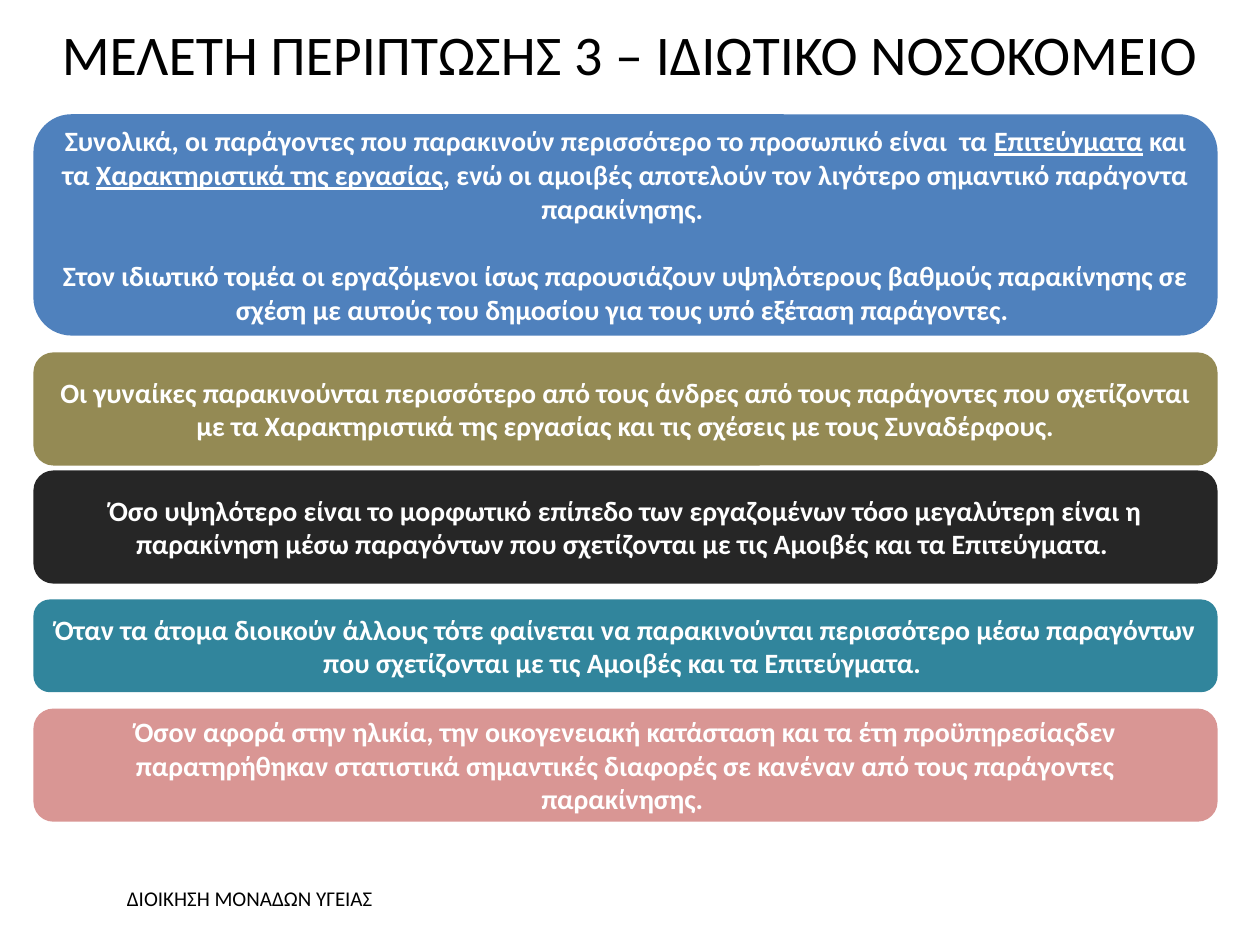
from pptx import Presentation
from pptx.dml.color import RGBColor
from pptx.enum import shapes, text
from pptx.util import Cm, Pt

WHITE = RGBColor(0xFF, 0xFF, 0xFF)
BLACK = RGBColor(0x00, 0x00, 0x00)
BLUE = RGBColor(0x4F, 0x81, 0xBD)
OLIVE = RGBColor(0x94, 0x8A, 0x54)
DARK = RGBColor(0x26, 0x26, 0x26)
TEAL = RGBColor(0x31, 0x85, 0x9C)
PINK = RGBColor(0xD9, 0x96, 0x94)
FONT = "Calibri"

TITLE = "ΜΕΛΕΤΗ ΠΕΡΙΠΤΩΣΗΣ 3 – ΙΔΙΩΤΙΚΟ ΝΟΣΟΚΟΜΕΙΟ"
FOOTER = "ΔΙΟΙΚΗΣΗ ΜΟΝΑΔΩΝ ΥΓΕΙΑΣ"

# top and height in cm, fill, paragraphs (underscores enclose underlined words)
BOXES = [
    (2.34, 4.39, BLUE, [
        "Συνολικά, οι παράγοντες που παρακινούν περισσότερο το προσωπικό είναι  τα "
        "_Επιτεύγματα_ και τα _Χαρακτηριστικά της εργασίας_, ενώ οι αμοιβές "
        "αποτελούν τον λιγότερο σημαντικό παράγοντα παρακίνησης. ",
        "Στον ιδιωτικό τομέα οι εργαζόμενοι ίσως παρουσιάζουν υψηλότερους βαθμούς "
        "παρακίνησης σε σχέση με αυτούς του δημοσίου για τους υπό εξέταση παράγοντες. ",
    ]),
    (7.14, 2.21, OLIVE, [
        "Οι γυναίκες παρακινούνται περισσότερο από τους άνδρες από τους παράγοντες "
        "που σχετίζονται με τα Χαρακτηριστικά της εργασίας και τις σχέσεις με τους "
        "Συναδέρφους.",
    ]),
    (9.52, 2.21, DARK, [
        "Όσο υψηλότερο είναι το μορφωτικό επίπεδο των εργαζομένων τόσο μεγαλύτερη "
        "είναι η παρακίνηση μέσω παραγόντων που σχετίζονται με τις Αμοιβές και τα "
        "Επιτεύγματα. ",
    ]),
    (12.12, 1.8, TEAL, [
        "Όταν τα άτομα διοικούν άλλους τότε φαίνεται να παρακινούνται περισσότερο "
        "μέσω παραγόντων που σχετίζονται με τις Αμοιβές και τα Επιτεύγματα. ",
    ]),
    (14.32, 2.21, PINK, [
        "Όσον αφορά στην ηλικία, την οικογενειακή κατάσταση και τα έτη "
        "προϋπηρεσίαςδεν παρατηρήθηκαν στατιστικά σημαντικές διαφορές σε κανέναν "
        "από τους παράγοντες παρακίνησης. ",
    ]),
]
LEFT, WIDTH = Cm(0.71), Cm(23.8)
GAP = Pt(19.5)  # one line of text between paragraphs


def style(run, size, color, bold=False):
    font = run.font
    font.name, font.size, font.bold = FONT, Pt(size), bold
    font.color.rgb = color


def add_box(slide, top, height, color, paras):
    box = slide.shapes.add_shape(
        shapes.MSO_SHAPE.ROUNDED_RECTANGLE, LEFT, Cm(top), WIDTH, Cm(height))
    box.shadow.inherit = False
    box.fill.solid()
    box.fill.fore_color.rgb = color
    box.line.color.rgb = color
    box.line.width = Pt(2)
    frame = box.text_frame
    frame.word_wrap = True
    frame.vertical_anchor = text.MSO_ANCHOR.MIDDLE
    for i, words in enumerate(paras):
        para = frame.add_paragraph() if i else frame.paragraphs[0]
        para.alignment = text.PP_ALIGN.CENTER
        if i:
            para.space_before = GAP
        for j, part in enumerate(words.split("_")):
            run = para.add_run()
            run.text = part
            style(run, 16, WHITE, bold=True)
            if j % 2:
                run.font.underline = True


def main():
    deck = Presentation()
    deck.slide_width, deck.slide_height = Cm(25.4), Cm(19.05)
    slide = deck.slides.add_slide(deck.slide_layouts[5])

    title = slide.shapes.title
    title.left, title.top, title.width, title.height = 0, 0, Cm(25.4), Cm(2.16)
    title.text_frame.text = TITLE
    title.text_frame.vertical_anchor = text.MSO_ANCHOR.MIDDLE
    para = title.text_frame.paragraphs[0]
    para.alignment = text.PP_ALIGN.CENTER
    style(para.runs[0], 32, BLACK)

    foot = slide.shapes.add_textbox(Cm(2.31), Cm(17.73), Cm(19.81), Cm(0.76))
    foot.text_frame.word_wrap = True
    foot.text_frame.text = FOOTER
    style(foot.text_frame.paragraphs[0].runs[0], 12, BLACK)

    for box in BOXES:
        add_box(slide, *box)
    deck.save("out.pptx")


if __name__ == "__main__":
    main()
